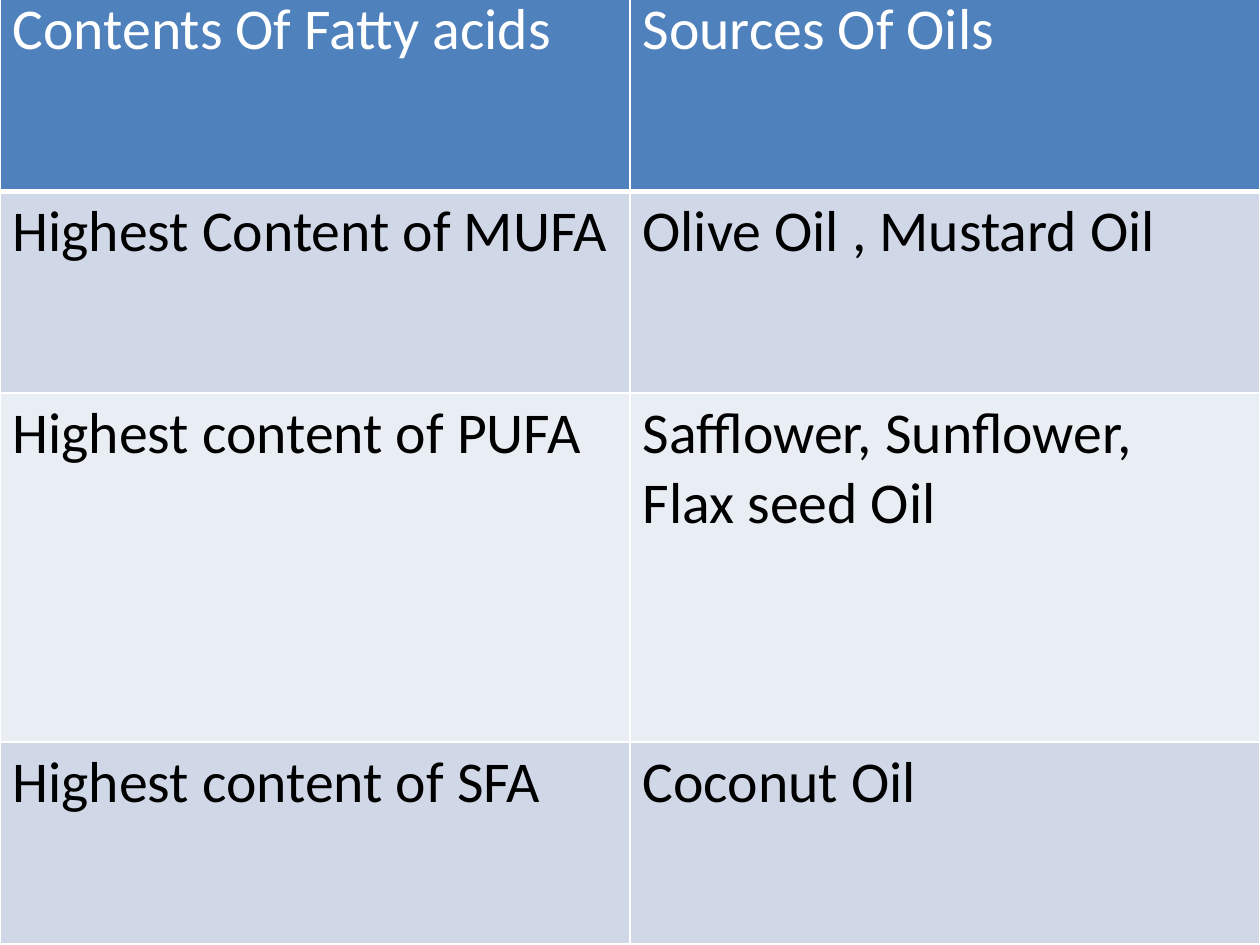
"""Builds a slide with a table of fatty acid contents and their oil sources."""
from dataclasses import dataclass

from lxml import etree
from pptx import Presentation
from pptx.dml.color import RGBColor
from pptx.oxml.ns import qn
from pptx.util import Inches, Pt


@dataclass(frozen=True)
class Theme:
    font: str = "Calibri"
    text_size: float = 33
    header_fill: str = "4F81BD"
    header_text: str = "FFFFFF"
    body_text: str = "000000"
    dark_band: str = "D0D8E8"
    light_band: str = "E9EDF4"
    border: str = "FFFFFF"
    border_width: float = 1
    header_rule_width: float = 3


@dataclass(frozen=True)
class OilRow:
    content: str
    sources: str
    height: float


THEME = Theme()
COLUMN_WIDTH = 5
TABLE_TOP = -0.08
OIL_ROWS = [
    OilRow("Contents Of Fatty acids", "Sources Of Oils", 1.6),
    OilRow("Highest Content of MUFA", "Olive Oil , Mustard Oil", 1.6),
    OilRow("Highest content of PUFA", "Safflower, Sunflower,\nFlax seed Oil", 2.77),
    OilRow("Highest content of SFA", "Coconut Oil", 1.6),
]


def write_text(frame, text: str, *, color: str, size: float = THEME.text_size,
               font: str = THEME.font, bold: bool = False) -> None:
    frame.text = text
    for paragraph in frame.paragraphs:
        for run in paragraph.runs:
            run.font.name = font
            run.font.size = Pt(size)
            run.font.bold = bold
            run.font.color.rgb = RGBColor.from_string(color)


def set_borders(cell, bottom_width: float) -> None:
    properties = cell._tc.get_or_add_tcPr()
    widths = {"a:lnL": THEME.border_width, "a:lnR": THEME.border_width,
              "a:lnT": THEME.border_width, "a:lnB": bottom_width}
    for position, (side, width) in enumerate(widths.items()):
        line = etree.Element(qn(side), w=str(Pt(width)))
        fill = etree.SubElement(line, qn("a:solidFill"))
        etree.SubElement(fill, qn("a:srgbClr"), val=THEME.border)
        properties.insert(position, line)


def format_cell(cell, text: str, row_index: int) -> None:
    is_header = row_index == 0
    band = THEME.dark_band if row_index % 2 else THEME.light_band
    cell.fill.solid()
    cell.fill.fore_color.rgb = RGBColor.from_string(THEME.header_fill if is_header else band)
    cell.margin_left = cell.margin_right = Inches(0.1)
    cell.margin_top = cell.margin_bottom = Inches(0.04)
    set_borders(cell, THEME.header_rule_width if is_header else THEME.border_width)
    write_text(cell.text_frame, text,
               color=THEME.header_text if is_header else THEME.body_text)


def add_oil_table(slide, oil_rows: list[OilRow]) -> None:
    total_height = sum(row.height for row in oil_rows)
    oil_table = slide.shapes.add_table(
        len(oil_rows), 2, Inches(0), Inches(TABLE_TOP),
        Inches(2 * COLUMN_WIDTH), Inches(total_height)).table
    for column in oil_table.columns:
        column.width = Inches(COLUMN_WIDTH)
    for row_index, oil_row in enumerate(oil_rows):
        oil_table.rows[row_index].height = Inches(oil_row.height)
        for column_index, text in enumerate((oil_row.content, oil_row.sources)):
            format_cell(oil_table.cell(row_index, column_index), text, row_index)


def main() -> None:
    presentation = Presentation()
    presentation.slide_width = Inches(10)
    presentation.slide_height = Inches(7.5)
    slide = presentation.slides.add_slide(presentation.slide_layouts[6])
    add_oil_table(slide, OIL_ROWS)
    presentation.save("out.pptx")


if __name__ == "__main__":
    main()
